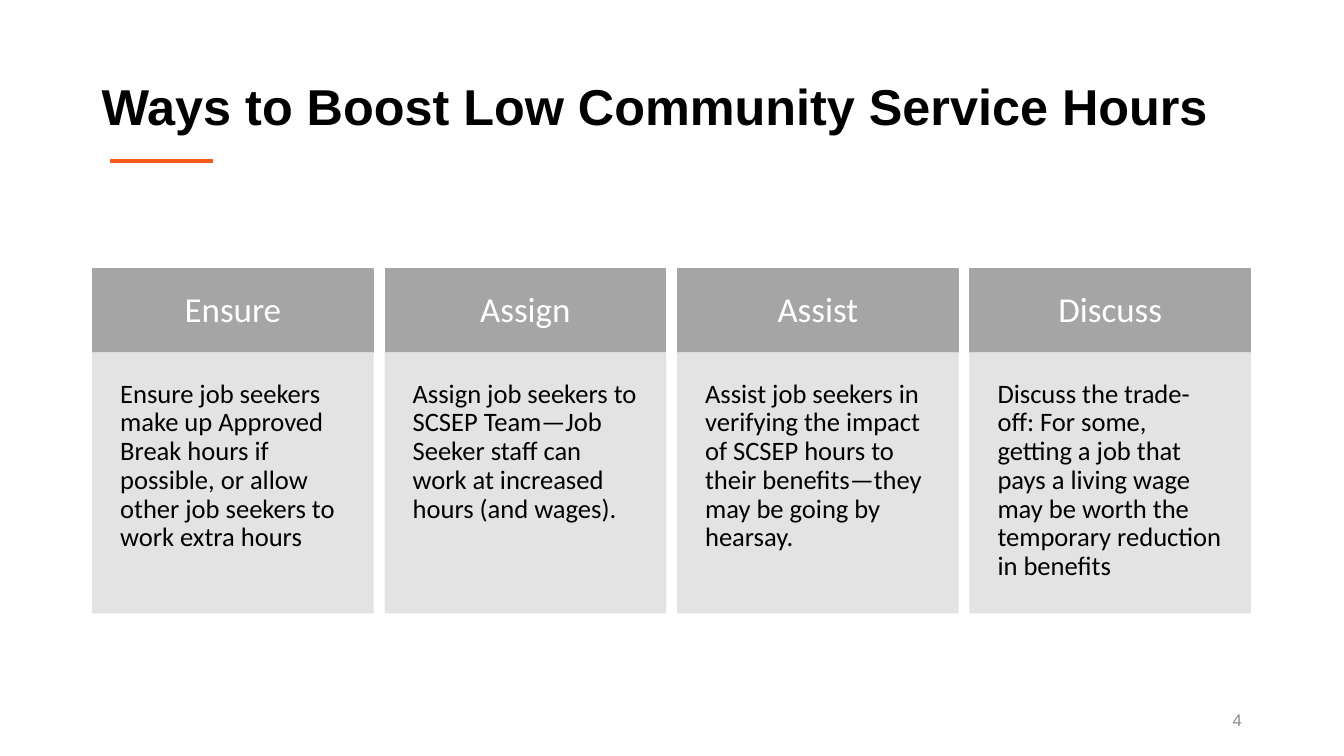
from lxml import etree
from pptx import Presentation
from pptx.dml.color import RGBColor
from pptx.enum.shapes import MSO_CONNECTOR, MSO_SHAPE
from pptx.enum.text import MSO_ANCHOR, PP_ALIGN
from pptx.oxml.ns import qn
from pptx.util import Cm, Pt

STRAIGHT = MSO_CONNECTOR.STRAIGHT
RECTANGLE = MSO_SHAPE.RECTANGLE
TOP, MIDDLE = MSO_ANCHOR.TOP, MSO_ANCHOR.MIDDLE
LEFT, CENTER, RIGHT = PP_ALIGN.LEFT, PP_ALIGN.CENTER, PP_ALIGN.RIGHT

COLORS = {
    "black": "000000",
    "white": "FFFFFF",
    "accent": "F75A1C",
    "heading": "A5A5A5",
    "body": "E1E1E1",
    "number": "8C8C8C",
}

WAYS = [
    ("Ensure", "Ensure job seekers make up Approved Break hours if possible, "
               "or allow other job seekers to work extra hours"),
    ("Assign", "Assign job seekers to SCSEP Team—Job Seeker staff can work "
               "at increased hours (and wages)."),
    ("Assist", "Assist job seekers in verifying the impact of SCSEP hours to "
               "their benefits—they may be going by hearsay."),
    ("Discuss", "Discuss the trade-off: For some, getting a job that pays a "
                "living wage may be worth the temporary reduction in benefits"),
]


def write(shape, text, font, size, color, align, anchor, bold=False, inset=None):
    frame = shape.text_frame
    frame.word_wrap = True
    frame.vertical_anchor = anchor
    if inset is not None:
        frame.margin_left = frame.margin_right = Cm(inset)
        frame.margin_top = frame.margin_bottom = Cm(inset)
    paragraph = frame.paragraphs[0]
    paragraph.text = text
    paragraph.alignment = align
    paragraph.line_spacing = 0.9
    paragraph.font.name = font
    paragraph.font.size = Pt(size)
    paragraph.font.bold = bold
    paragraph.font.color.rgb = RGBColor.from_string(COLORS[color])


def add_panel(left, top, width, height, color):
    panel = slide.shapes.add_shape(RECTANGLE, Cm(left), Cm(top), Cm(width), Cm(height))
    panel.shadow.inherit = False
    panel.line.width = Pt(1)
    for fill in (panel.fill, panel.line.fill):
        fill.solid()
        fill.fore_color.rgb = RGBColor.from_string(COLORS[color])
    return panel


prs = Presentation()
prs.slide_width, prs.slide_height = Cm(33.87), Cm(19.05)
slide = prs.slides.add_slide(prs.slide_layouts[6])

accent = slide.shapes.add_connector(STRAIGHT, Cm(2.77), Cm(4.06), Cm(5.36), Cm(4.06))
accent.line.width = Pt(3)
accent.line.color.rgb = RGBColor.from_string(COLORS["accent"])
etree.SubElement(accent._element.spPr, qn("a:effectLst"))

title = slide.shapes.add_textbox(Cm(2.31), Cm(1.42), Cm(29.21), Cm(2.67))
write(title, "Ways to Boost Low Community Service Hours",
      "Arial", 36, "black", LEFT, MIDDLE, bold=True)

first_left, pitch, column_width = 2.34, 7.37, 7.06
heading_top, heading_height, body_height = 6.78, 2.11, 6.55

for index, (verb, advice) in enumerate(WAYS):
    left = first_left + index * pitch
    heading = add_panel(left, heading_top, column_width, heading_height, "heading")
    write(heading, verb, "Calibri", 25, "white", CENTER, MIDDLE, inset=0.56)

    body = add_panel(left, heading_top + heading_height, column_width, body_height, "body")
    for color in body._element.spPr.iter(qn("a:srgbClr")):
        etree.SubElement(color, qn("a:alpha"), val="90000")
    write(body, advice, "Calibri", 19, "black", LEFT, TOP, inset=0.69)

page_number = slide.shapes.add_textbox(Cm(23.93), Cm(17.65), Cm(7.62), Cm(1.02))
write(page_number, "4", "Arial", 12, "number", RIGHT, MIDDLE)

prs.save("out.pptx")
